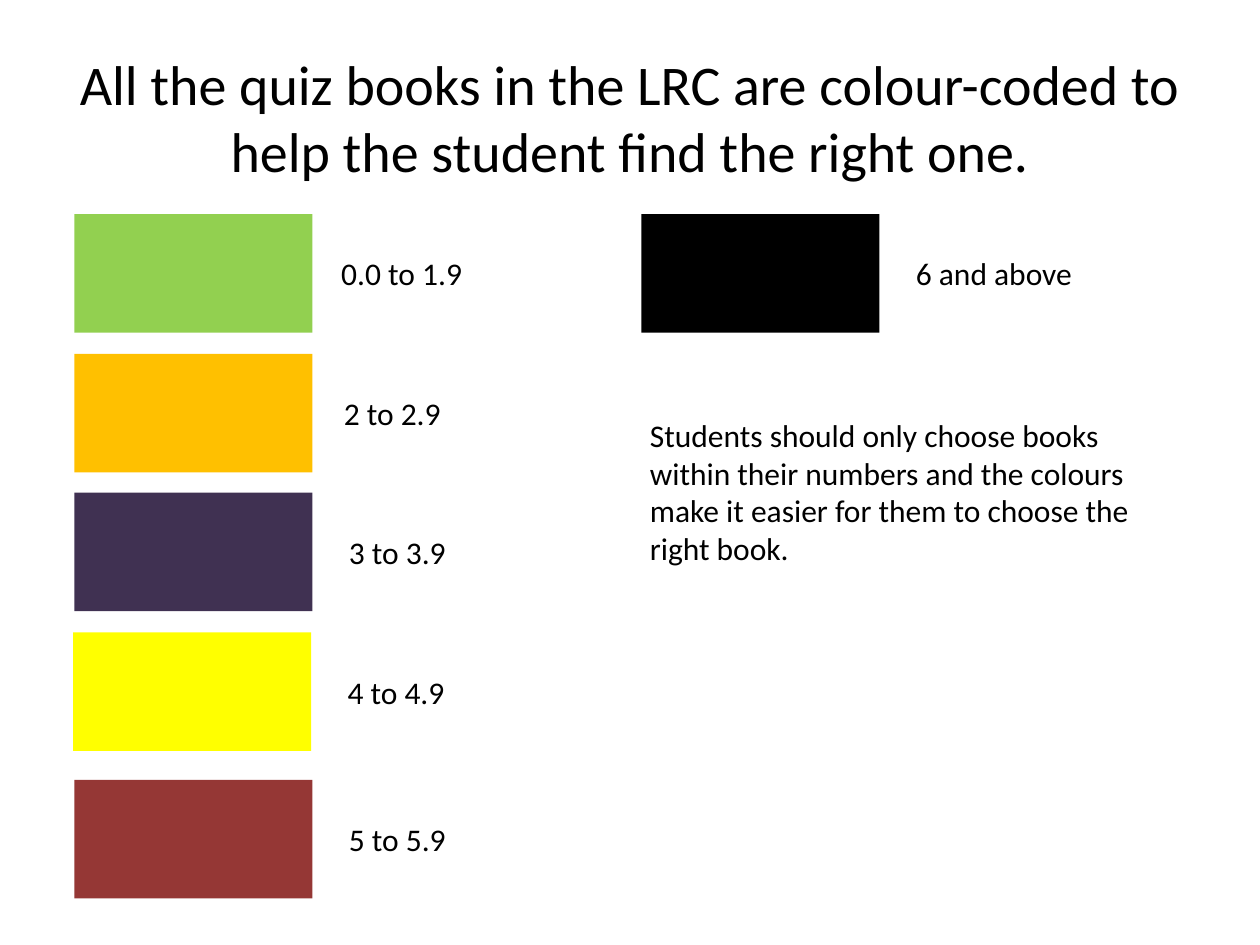
from pptx import Presentation
from pptx.dml.color import RGBColor
from pptx.enum.shapes import MSO_SHAPE as Shape
from pptx.enum.text import MSO_ANCHOR as Anchor, MSO_AUTO_SIZE as AutoSize, PP_ALIGN as Align
from pptx.util import Inches, Pt

TITLE = "All the quiz books in the LRC are colour-coded to help the student find the right one."
ADVICE = ("Students should only choose books within their numbers and the colours "
          "make it easier for them to choose the right book.")
COLORS = {"text": "000000", "green": "92D050", "orange": "FFC000", "purple": "403152",
          "yellow": "FFFF00", "red": "953735", "black": "000000"}
# colour, reading level, swatch left, swatch top, label left
LEVELS = [
    ("green", "0.0 to 1.9", 0.59, 1.7, 2.61),
    ("orange", "2 to 2.9", 0.59, 2.81, 2.63),
    ("purple", "3 to 3.9", 0.59, 3.91, 2.67),
    ("yellow", "4 to 4.9", 0.58, 5.02, 2.66),
    ("red", "5 to 5.9", 0.59, 6.19, 2.67),
    ("black", "6 and above", 5.09, 1.7, 7.17),
]
SWATCH_WIDTH, SWATCH_HEIGHT = 1.89, 0.94
LABEL_WIDTH, LABEL_HEIGHT, LABEL_DROP = 2.28, 0.4, 0.27


def color(name):
    return RGBColor.from_string(COLORS[name])


def write(frame, text, size, align):
    frame.word_wrap = True
    para = frame.paragraphs[0]
    para.text = text
    para.alignment = align
    para.font.name = "Calibri"
    para.font.size = Pt(size)
    para.font.color.rgb = color("text")


def add_text(slide, text, left, top, width, height):
    box = slide.shapes.add_textbox(Inches(left), Inches(top), Inches(width), Inches(height))
    write(box.text_frame, text, 18, Align.LEFT)
    box.text_frame.auto_size = AutoSize.SHAPE_TO_FIT_TEXT


def add_swatch(slide, name, left, top):
    swatch = slide.shapes.add_shape(Shape.RECTANGLE, Inches(left), Inches(top),
                                    Inches(SWATCH_WIDTH), Inches(SWATCH_HEIGHT))
    swatch.shadow.inherit = False
    swatch.fill.solid()
    swatch.fill.fore_color.rgb = color(name)
    swatch.line.fill.background()


def main():
    deck = Presentation()
    deck.slide_width, deck.slide_height = Inches(10), Inches(7.5)
    slide = deck.slides.add_slide(deck.slide_layouts[5])

    title = slide.shapes.title
    title.left, title.top = Inches(0.5), Inches(0.3)
    title.width, title.height = Inches(9), Inches(1.25)
    write(title.text_frame, TITLE, 32, Align.CENTER)
    title.text_frame.vertical_anchor = Anchor.MIDDLE

    for name, level, left, top, label_left in LEVELS:
        add_swatch(slide, name, left, top)
        add_text(slide, level, label_left, top + LABEL_DROP, LABEL_WIDTH, LABEL_HEIGHT)
    add_text(slide, ADVICE, 5.06, 3.25, 4.06, 1.31)

    deck.save("out.pptx")


if __name__ == "__main__":
    main()
